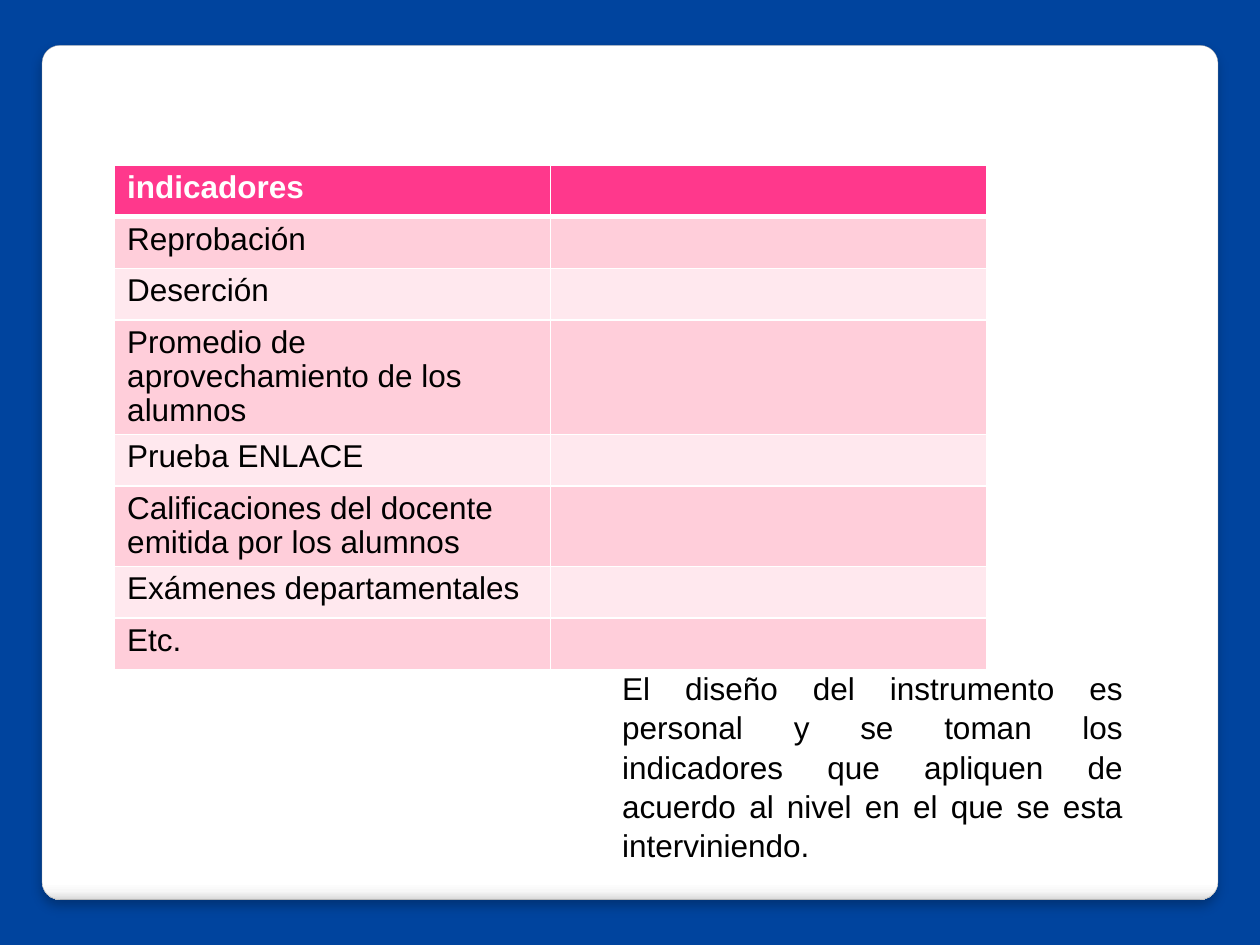
from lxml import etree
from pptx import Presentation
from pptx.dml.color import RGBColor
from pptx.enum.shapes import MSO_SHAPE
from pptx.enum.text import PP_ALIGN
from pptx.oxml import parse_xml
from pptx.oxml.ns import nsdecls, qn
from pptx.util import Inches, Pt

WIDTH, HEIGHT = 10, 7.5
BLUE, WHITE, BLACK, GREY = "00449E", "FFFFFF", "000000", "A4A4A4"
PINK, BANDS = "FF388C", ("FFCEDA", "FFE8EE")
CARD_STOPS = ((0, WHITE), (98, WHITE), (99, "F7F7F7"), (100, "DADADA"))
INDICATORS = (
    "indicadores",
    "Reprobación",
    "Deserción",
    "Promedio de aprovechamiento de los alumnos",
    "Prueba ENLACE",
    "Calificaciones del docente emitida por los alumnos",
    "Exámenes departamentales",
    "Etc.",
)
NOTE = ("El diseño del instrumento es personal y se toman los indicadores que "
        "apliquen de acuerdo al nivel en el que se esta interviniendo.")


def color(value):
    return RGBColor.from_string(value)


def paint(fill, value):
    fill.solid()
    fill.fore_color.rgb = color(value)


def write(text_frame, text, size=18, font="Arial", ink=BLACK, bold=False,
          align=PP_ALIGN.LEFT, spacing=1.0):
    paragraph = text_frame.paragraphs[0]
    paragraph.alignment = align
    paragraph.line_spacing = spacing
    run = paragraph.add_run()
    run.text = text
    run.font.size, run.font.name, run.font.bold = Pt(size), font, bold
    run.font.color.rgb = color(ink)


def add_card(slide):
    """Add the white rounded panel with a shaded lower edge and a soft shadow."""
    margin_x, margin_y = WIDTH / 30, 0.36
    card = slide.shapes.add_shape(
        MSO_SHAPE.ROUNDED_RECTANGLE, Inches(margin_x), Inches(margin_y),
        Inches(WIDTH - 2 * margin_x), Inches(HEIGHT - 2 * margin_y))
    card.adjustments[0] = 0.021
    card.line.color.rgb = color(GREY)
    card.line.width = Pt(0.16)
    card.shadow.inherit = False
    card.fill.gradient()
    card.fill.gradient_angle = 270  # counter-clockwise: top to bottom
    properties = card._element.spPr
    stops = properties.find(".//" + qn("a:gsLst"))
    for stop in list(stops):
        stops.remove(stop)
    for position, value in CARD_STOPS:
        stop = etree.SubElement(stops, qn("a:gs"), pos=str(position * 1000))
        etree.SubElement(stop, qn("a:srgbClr"), val=value)
    properties.find(qn("a:effectLst")).append(parse_xml(
        f'<a:outerShdw {nsdecls("a")} blurRad="{Pt(6)}" dist="{Pt(4)}" '
        f'dir="5400000" algn="t" rotWithShape="0"><a:srgbClr val="{BLACK}">'
        '<a:alpha val="25000"/></a:srgbClr></a:outerShdw>'))


def set_borders(cell, **widths):
    """Draw white borders; sides are L, R, T and B, widths in points."""
    properties = cell._tc.get_or_add_tcPr()
    for index, (side, width) in enumerate(widths.items()):
        properties.insert(index, parse_xml(
            f'<a:ln{side} {nsdecls("a")} w="{Pt(width)}"><a:solidFill>'
            f'<a:srgbClr val="{WHITE}"/></a:solidFill></a:ln{side}>'))


def add_indicator_table(slide, left, top, column_width, row_height):
    count = len(INDICATORS)
    table = slide.shapes.add_table(
        count, 2, Inches(left), Inches(top),
        Inches(2 * column_width), Inches(count * row_height)).table
    for row_index, (row, label) in enumerate(zip(table.rows, INDICATORS)):
        header = row_index == 0
        for cell in row.cells:
            paint(cell.fill, PINK if header else BANDS[(row_index - 1) % 2])
            set_borders(cell, L=1, R=1, T=3 if row_index == 1 else 1,
                        B=3 if header else 1)
        write(row.cells[0].text_frame, label, bold=header,
              ink=WHITE if header else BLACK, spacing=0.96)


def add_note(slide, left, top, width, height):
    box = slide.shapes.add_textbox(
        Inches(left), Inches(top), Inches(width), Inches(height))
    box.text_frame.word_wrap = True
    write(box.text_frame, NOTE, align=PP_ALIGN.JUSTIFY, spacing=1.04)


def main():
    presentation = Presentation()
    presentation.slide_width = Inches(WIDTH)
    presentation.slide_height = Inches(HEIGHT)
    slide = presentation.slides.add_slide(presentation.slide_layouts[6])
    paint(slide.background.fill, BLUE)
    add_card(slide)
    add_indicator_table(slide, 0.91, 1.31, column_width=3.46, row_height=0.41)
    add_note(slide, 4.84, 5.25, 4.17, 1.62)
    presentation.save("out.pptx")


if __name__ == "__main__":
    main()
